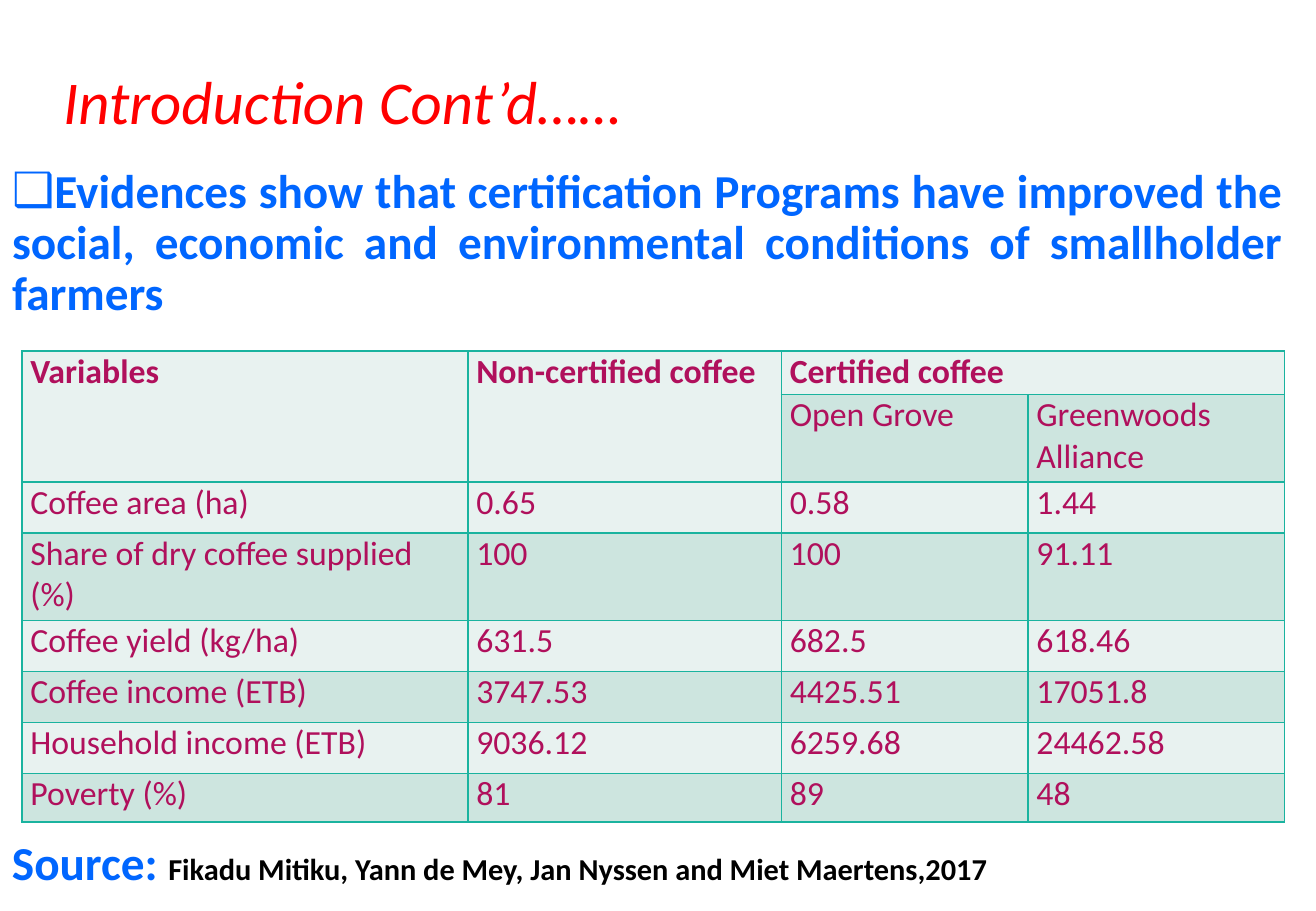
from pptx import Presentation
from pptx.dml.color import RGBColor
from pptx.enum.text import MSO_ANCHOR, MSO_AUTO_SIZE, PP_ALIGN
from pptx.oxml.ns import qn
from pptx.util import Inches, Pt
from lxml import etree

LEFT, JUSTIFY = PP_ALIGN.LEFT, PP_ALIGN.JUSTIFY
TOP, MIDDLE = MSO_ANCHOR.TOP, MSO_ANCHOR.MIDDLE
NO_FIT = MSO_AUTO_SIZE.NONE
COLORS = {"title": "FF0000", "body": "0066FF", "source": "000000",
          "table": "B0105C", "border": "1AB39F",
          "light": "E8F2F0", "dark": "CDE5DF"}


def set_font(font, size, color, bold=False, italic=False):
    font.name, font.size = "Calibri", Pt(size)
    font.bold, font.italic = bold, italic
    font.color.rgb = RGBColor.from_string(COLORS[color])


def place(shape, left, top, width, height, anchor):
    shape.left, shape.top = Inches(left), Inches(top)
    shape.width, shape.height = Inches(width), Inches(height)
    frame = shape.text_frame
    frame.word_wrap, frame.auto_size = True, NO_FIT
    frame.vertical_anchor = anchor
    return frame.paragraphs[0]


deck = Presentation()
deck.slide_width, deck.slide_height = Inches(10.83), Inches(7.5)
page = deck.slides.add_slide(deck.slide_layouts[1])

# Title
para = place(page.shapes.title, 0.42, 0.47, 5.29, 0.71, MIDDLE)
para.text = "Introduction Cont’d……"
para.alignment = LEFT
set_font(para.font, 36, "title", italic=True)

# Evidence statement
para = place(page.placeholders[1], 0, 1.33, 10.65, 1.4, TOP)
para.text = ("Evidences show that certification Programs have improved the "
             "social, economic and environmental conditions of smallholder farmers")
properties = para._p.get_or_add_pPr()
properties.set("marL", "0")
properties.set("indent", "0")
etree.SubElement(properties, qn("a:buChar")).set("char", "❑")
para.alignment, para.line_spacing, para.space_before = JUSTIFY, 0.9, Pt(0)
set_font(para.font, 28, "body", bold=True)

# Coffee comparison table
rows = [
    ["Variables", "Non-certified coffee", "Certified coffee", ""],
    ["", "", "Open Grove", "Greenwoods Alliance"],
    ["Coffee area (ha)", "0.65", "0.58", "1.44"],
    ["Share of dry coffee supplied (%)", "100", "100", "91.11"],
    ["Coffee yield (kg/ha)", "631.5", "682.5", "618.46"],
    ["Coffee income (ETB)", "3747.53", "4425.51", "17051.8"],
    ["Household income (ETB)", "9036.12", "6259.68", "24462.58"],
    ["Poverty (%)", "81", "89", "48"],
]
widths = [3.67, 2.58, 2.03, 2.11]
heights = [0.36, 0.72, 0.42, 0.72, 0.42, 0.42, 0.42, 0.4]
table = page.shapes.add_table(len(rows), len(widths), Inches(0.18), Inches(2.89),
                              Inches(sum(widths)), Inches(sum(heights))).table
for column, width in zip(table.columns, widths):
    column.width = Inches(width)
for row, height in zip(table.rows, heights):
    row.height = Inches(height)

for row_index, values in enumerate(rows):
    for column_index, value in enumerate(values):
        cell = table.cell(row_index, column_index)
        cell.margin_left = cell.margin_right = Inches(0.07)
        cell.margin_top = cell.margin_bottom = 0
        cell_properties = cell._tc.get_or_add_tcPr()
        for side in ("a:lnL", "a:lnR", "a:lnT", "a:lnB"):
            line = etree.SubElement(cell_properties, qn(side), w=str(Pt(1)))
            fill = etree.SubElement(line, qn("a:solidFill"))
            etree.SubElement(fill, qn("a:srgbClr"), val=COLORS["border"])
        cell.fill.solid()
        band = "dark" if row_index % 2 else "light"
        cell.fill.fore_color.rgb = RGBColor.from_string(COLORS[band])
        para = cell.text_frame.paragraphs[0]
        para.text = value
        set_font(para.font, 20, "table", bold=row_index == 0)

# Heading cells that span rows or columns
for column_index in (0, 1):
    table.cell(0, column_index).merge(table.cell(1, column_index))
table.cell(0, 2).merge(table.cell(0, 3))

# Source line
box = page.shapes.add_textbox(0, 0, 0, 0)
para = place(box, 0, 6.86, 10.65, 0.53, TOP)
para.line_spacing = 0.9
for text, size, color in [
    ("Source: ", 28, "body"),
    ("Fikadu Mitiku, Yann de Mey, Jan Nyssen and Miet Maertens,2017", 18, "source"),
]:
    span = para.add_run()
    span.text = text
    set_font(span.font, size, color, bold=True)

deck.save("out.pptx")
